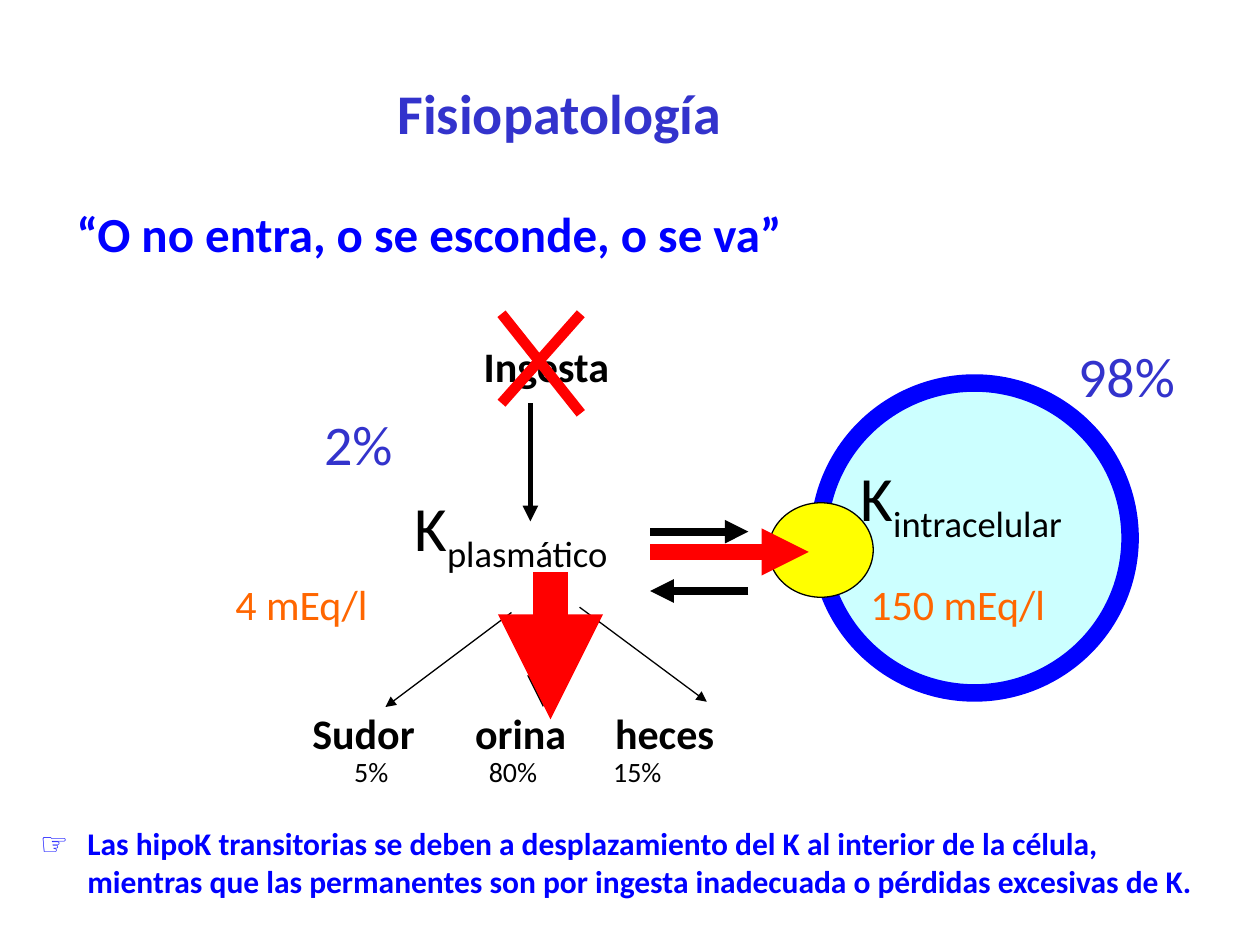
import pptx
import pptx.dml.color
import pptx.enum.shapes
import pptx.enum.text
import pptx.oxml
import pptx.oxml.ns
import pptx.util

Pt = pptx.util.Pt
ALIGN = pptx.enum.text.PP_ALIGN
ANCHOR = pptx.enum.text.MSO_ANCHOR
COLORS = {
    "black": "000000",
    "blue": "0000FF",
    "indigo": "3333CC",
    "orange": "FF6600",
    "red": "FF0000",
    "cyan": "CCFFFF",
    "yellow": "FFFF00",
}


def color(name):
    return pptx.dml.color.RGBColor.from_string(COLORS[name])


def add_element(parent, tag, **attributes):
    element = pptx.oxml.parse_xml(f"<a:{tag} {pptx.oxml.ns.nsdecls('a')}/>")
    for name, value in attributes.items():
        element.set(name, str(value))
    parent.append(element)
    return element


class SlideBuilder:
    font = "Calibri"

    def __init__(self, presentation):
        self.slide = presentation.slides.add_slide(presentation.slide_layouts[6])

    def text(self, box, words, size, color_name="black", bold=False, wrap=True,
             subscript=None, hanging=0, tabs=(), frame_format=None, paragraph_format=None):
        shape = self.slide.shapes.add_textbox(*map(Pt, box))
        frame = shape.text_frame
        paragraph = frame.paragraphs[0]
        for target, values in (
            (frame, {"word_wrap": wrap, **(frame_format or {})}),
            (paragraph, paragraph_format or {}),
        ):
            for name, value in values.items():
                setattr(target, name, value)
        properties = paragraph._p.get_or_add_pPr()
        if hanging:
            properties.set("marL", str(Pt(hanging)))
            properties.set("indent", str(-Pt(hanging)))
        if tabs:
            tab_list = add_element(properties, "tabLst")
            for position in tabs:
                add_element(tab_list, "tab", pos=Pt(position), algn="l")
        for part in filter(None, (words, subscript)):
            run = paragraph.add_run()
            run.text = part
            for name, value in {"name": self.font, "size": Pt(size), "bold": bold}.items():
                setattr(run.font, name, value)
            run.font.color.rgb = color(color_name)
            if part == subscript:
                run._r.get_or_add_rPr().set("baseline", "-25000")

    def ellipse(self, box, fill, line, width):
        shape = self.slide.shapes.add_shape(
            pptx.enum.shapes.MSO_SHAPE.OVAL, *map(Pt, box))
        shape.shadow.inherit = False
        shape.fill.solid()
        shape.fill.fore_color.rgb = color(fill)
        shape.line.color.rgb = color(line)
        shape.line.width = Pt(width)

    def line(self, start, end, width, color_name="black", arrow=True):
        connector = self.slide.shapes.add_connector(
            pptx.enum.shapes.MSO_CONNECTOR.STRAIGHT, *map(Pt, start + end))
        connector.line.color.rgb = color(color_name)
        connector.line.width = Pt(width)
        if arrow:
            add_element(connector.line._get_or_add_ln(), "tailEnd", type="triangle")
        add_element(connector._element.spPr, "effectLst")


def main():
    presentation = pptx.Presentation()
    presentation.slide_width, presentation.slide_height = Pt(720), Pt(540)
    builder = SlideBuilder(presentation)
    centered = {"alignment": ALIGN.CENTER}

    builder.text((9.4, 35.3, 620.6, 62.6), "Fisiopatología", 32, "indigo", bold=True,
                 frame_format={"vertical_anchor": ANCHOR.MIDDLE},
                 paragraph_format={**centered, "line_spacing": 0.9})
    builder.text((36.7, 116.6, 602, 53.3), "“O no entra, o se esconde, o se va”", 28,
                 "blue", bold=True, hanging=18, paragraph_format={"line_spacing": 0.9})

    builder.text((269.3, 190.8, 87.1, 36.7), "Ingesta", 24, bold=True, wrap=False)
    builder.text((99.4, 401, 319, 36.7), "\tSudor\torina\theces", 24, bold=True,
                 tabs=(72, 165, 245))
    for start, end, width in (
        ((310.3, 350), (310.3, 404), 6),
        ((292.3, 350), (220.3, 404), 0.75),
        ((331.2, 347), (403.9, 401), 0.75),
    ):
        builder.line(start, end, width)
    builder.text((184.3, 427.7, 203.8, 26.6), "\t5%\t80%\t15%", 16, tabs=(11, 88, 159))

    builder.text((229.7, 275.8, 180, 50.4), "K", 36, subscript="plasmático")
    builder.line((303.1, 230.4), (303.1, 298), 3)

    builder.ellipse((468, 218.9, 177.8, 177.1), "cyan", "blue", 10)
    builder.ellipse((439.2, 287.3, 59.8, 54), "yellow", "black", 0.75)
    builder.line((371.5, 303.8), (427.7, 303.8), 4.5)
    builder.line((427.7, 337.7), (371.5, 337.7), 4.5)
    builder.text((484.6, 258.5, 180, 50.4), "K", 36, subscript="intracelular")

    for box, words in (
        ((490.3, 326.9, 115.2, 36.7), "150 mEq/l"),
        ((127.4, 326.9, 90.7, 36.7), "4 mEq/l"),
    ):
        builder.text(box, words, 24, "orange", wrap=False)
    for box, words in (
        ((608.4, 191.5, 70.6, 46.1), "98%"),
        ((177.8, 230.4, 54, 46.1), "2%"),
    ):
        builder.text(box, words, 32, "indigo", wrap=False, paragraph_format=centered)

    builder.line((286.6, 179.3), (331.9, 236.2), 6, "red", arrow=False)
    builder.line((286.6, 230.4), (331.9, 179.3), 6, "red", arrow=False)
    builder.line((371.5, 315.4), (462.2, 315.4), 9, "red")
    builder.line((314.6, 326.9), (314.6, 411.1), 20, "red")

    builder.text((15.8, 467.3, 685.4, 53.3),
                 "☞\tLas hipoK transitorias se deben a desplazamiento del K al interior de la "
                 "célula, mientras que las permanentes son por ingesta inadecuada o pérdidas "
                 "excesivas de K.", 18, "blue", bold=True, hanging=27, tabs=(24,))

    presentation.save("out.pptx")


if __name__ == "__main__":
    main()
